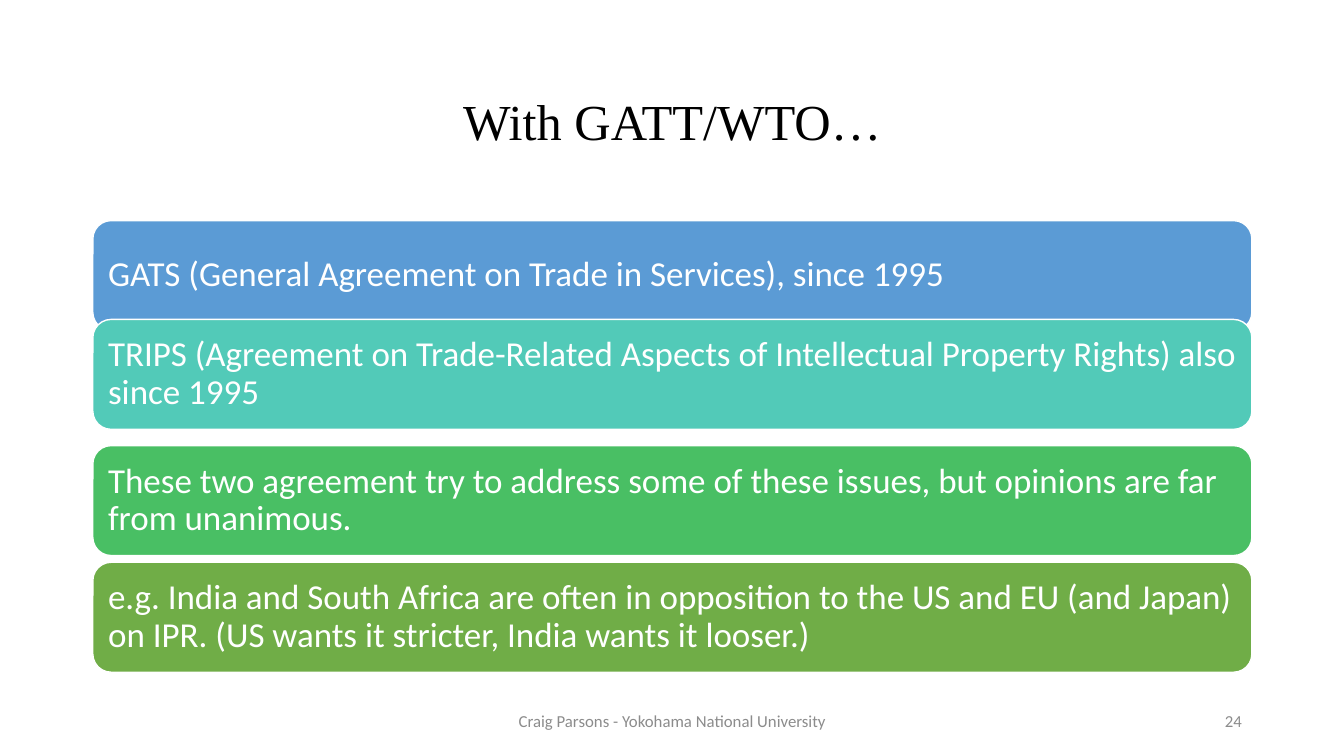
from pptx import Presentation
from pptx.dml.color import RGBColor
from pptx.enum.shapes import MSO_SHAPE as Preset
from pptx.enum.text import MSO_ANCHOR as Anchor, PP_ALIGN as Align
from pptx.util import Cm, Pt

COLORS = {
    "title": "000000",
    "footer": "8C8C8C",
    "white": "FFFFFF",
    "blue": "5B9BD5",
    "teal": "52CAB8",
    "green": "49BF64",
    "olive": "70AD47",
}
LEFT, WIDTH, BAR_HEIGHT = 2.34, 29.21, 2.77
FOOTER_TOP, FOOTER_HEIGHT = 17.66, 1.01
BARS = [
    (5.56, "blue", "GATS (General Agreement on Trade in Services), since 1995"),
    (8.05, "teal", "TRIPS (Agreement on Trade-Related Aspects of Intellectual "
                   "Property Rights) also since 1995"),
    (11.23, "green", "These two agreement try to address some of these issues, "
                     "but opinions are far from unanimous."),
    (14.17, "olive", "e.g. India and South Africa are often in opposition to the US "
                     "and EU (and Japan) on IPR. (US wants it stricter, India wants "
                     "it looser.)"),
]


def rgb(name):
    """Return the named colour."""
    return RGBColor.from_string(COLORS[name])


def write(frame, text, size, color, align, font="Calibri", spacing=1.0):
    """Fill a text frame with one styled, vertically centred paragraph."""
    frame.word_wrap = True
    frame.vertical_anchor = Anchor.MIDDLE
    paragraph = frame.paragraphs[0]
    paragraph.alignment = align
    paragraph.line_spacing = spacing
    run = paragraph.add_run()
    run.text = text
    run.font.size = Pt(size)
    run.font.name = font
    run.font.color.rgb = rgb(color)


def add_label(slide, box, *style, **options):
    """Add a text box at the given left, top, width and height."""
    label = slide.shapes.add_textbox(*map(Cm, box))
    write(label.text_frame, *style, **options)


def add_bar(slide, top, color, text):
    """Add a rounded bar that carries one statement."""
    bar = slide.shapes.add_shape(
        Preset.ROUNDED_RECTANGLE, Cm(LEFT), Cm(top), Cm(WIDTH), Cm(BAR_HEIGHT))
    bar.shadow.inherit = False
    bar.fill.solid()
    bar.fill.fore_color.rgb = rgb(color)
    bar.line.color.rgb = rgb("white")
    bar.line.width = Pt(1)
    frame = bar.text_frame
    frame.margin_left = frame.margin_right = Cm(0.25)
    frame.margin_top = frame.margin_bottom = Cm(0.25)
    write(frame, text, 25, "white", Align.LEFT, spacing=0.9)


def main():
    """Build the slide and save it."""
    deck = Presentation()
    deck.slide_width, deck.slide_height = Cm(33.87), Cm(19.05)
    slide = deck.slides.add_slide(deck.slide_layouts[6])
    add_label(slide, (LEFT, 1.55, WIDTH, 3.15), "With GATT/WTO…", 36, "title",
              Align.CENTER, font="Times New Roman", spacing=0.9)
    for top, color, text in BARS:
        add_bar(slide, top, color, text)
    add_label(slide, (11.23, FOOTER_TOP, 11.43, FOOTER_HEIGHT),
              "Craig Parsons - Yokohama National University", 12, "footer",
              Align.CENTER)
    add_label(slide, (23.93, FOOTER_TOP, 7.62, FOOTER_HEIGHT), "24", 12, "footer",
              Align.RIGHT)
    deck.save("out.pptx")


if __name__ == "__main__":
    main()
